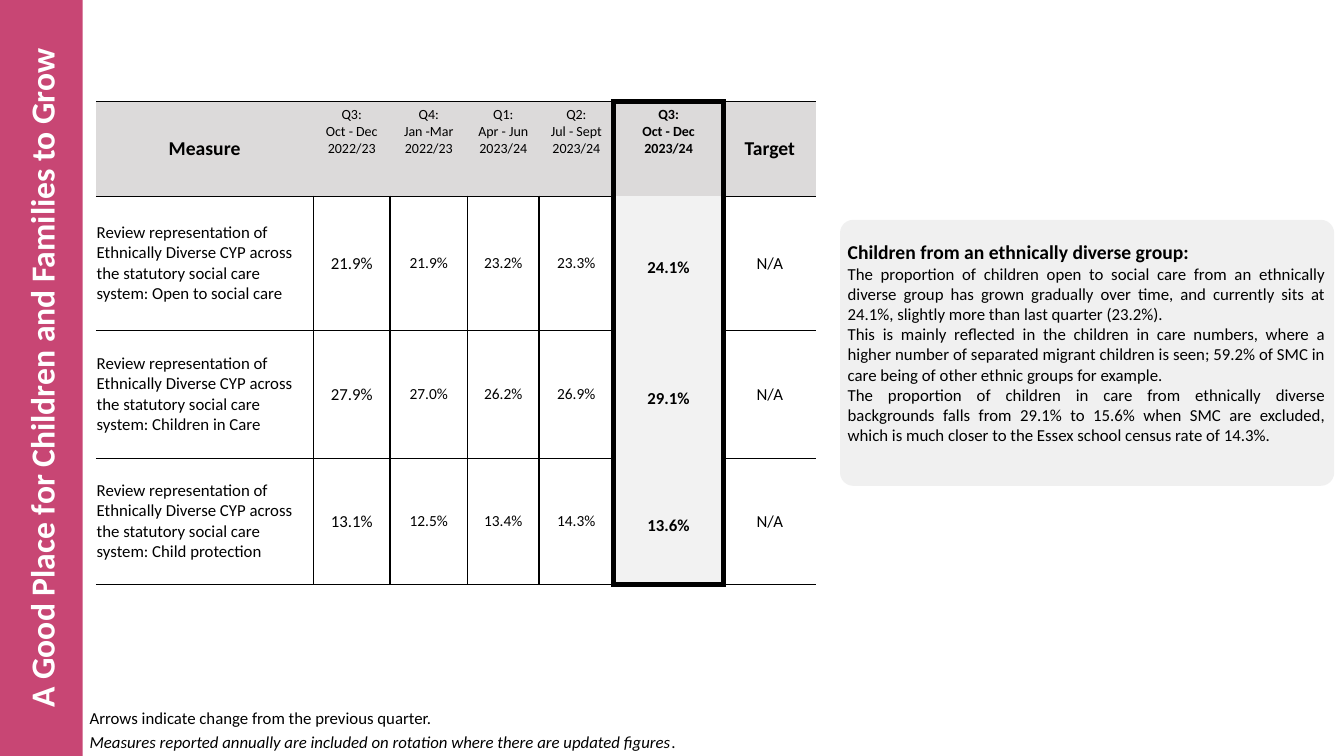
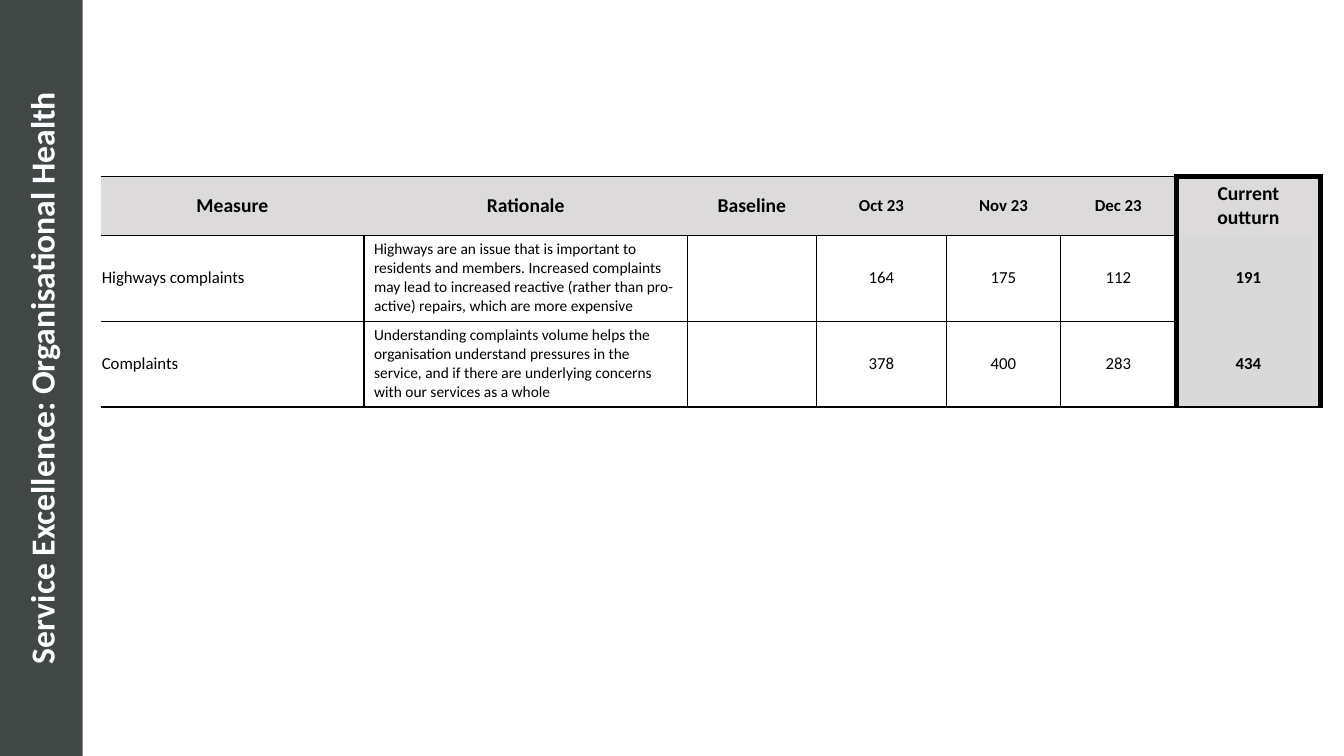
from dataclasses import dataclass

from lxml import etree
from pptx import Presentation, util as u
from pptx.dml.color import RGBColor
from pptx.enum import shapes, text
from pptx.oxml import ns

FONT = "Calibri"
BLACK = RGBColor(0x00, 0x00, 0x00)
WHITE = RGBColor(0xFF, 0xFF, 0xFF)
PINK = RGBColor(0xC8, 0x46, 0x74)
SLATE = RGBColor(0x41, 0x47, 0x45)
HEADER_GREY = RGBColor(0xDC, 0xDA, 0xDA)
LIGHT_GREY = RGBColor(0xF2, 0xF2, 0xF2)
MID_GREY = RGBColor(0xD9, 0xD9, 0xD9)

SLIDE_WIDTH, SLIDE_HEIGHT = 960, 540
BAND_WIDTH = 59
THIN, THICK = 1, 4.5
CENTER, LEFT = text.PP_ALIGN.CENTER, text.PP_ALIGN.LEFT
JUSTIFY = text.PP_ALIGN.JUSTIFY
TOP, MIDDLE = text.MSO_ANCHOR.TOP, text.MSO_ANCHOR.MIDDLE


@dataclass(frozen=True)
class Box:
    left: float
    top: float
    width: float
    height: float

    def lengths(self) -> list[u.Length]:
        return [u.Pt(value) for value in (self.left, self.top, self.width, self.height)]


@dataclass(frozen=True)
class Column:
    width: float
    heading: str
    heading_size: float = 14
    heading_bold: bool = True
    size: float = 12
    align: text.PP_ALIGN = CENTER
    padding: float = 0.7


@dataclass(frozen=True)
class MeasureTable:
    left: float
    top: float
    columns: list[Column]
    row_heights: list[float]
    rows: list[list[str]]
    highlight: int
    highlight_fill: RGBColor
    highlight_bottom: float
    highlight_drop: float = 0

    def vertical_weight(self, row: int, edge: int) -> float:
        """Line weight at the left of column number `edge`."""
        if edge in (self.highlight, self.highlight + 1):
            return THICK
        inner = row > 0 and 0 < edge < len(self.columns)
        return THIN if inner else 0

    def horizontal_weight(self, edge: int, column: int) -> float:
        """Line weight above row number `edge`."""
        if column != self.highlight:
            return THIN
        return {0: THICK, len(self.row_heights): self.highlight_bottom}.get(edge, 0)


@dataclass(frozen=True)
class Passage:
    words: str
    size: float = 12
    bold: bool = False
    italic: bool = False
    align: text.PP_ALIGN = LEFT


QUARTERS = [
    Column(54.7, "Q3:\nOct - Dec\n2022/23", 10, False),
    Column(55.4, "Q4:\nJan -Mar\n2022/23", 10, False, 11),
    Column(51.1, "Q1:\nApr - Jun\n2023/24", 10, False, 11),
    Column(53.3, "Q2:\nJul - Sept\n2023/24", 10, False, 11),
    Column(78.5, "Q3:\nOct - Dec\n2023/24", 10),
]
REVIEW = ("Review representation of Ethnically Diverse CYP across "
          "the statutory social care system: ")
DIVERSITY_TABLE = MeasureTable(
    left=68.4, top=72.5,
    columns=[Column(155.5, "Measure", align=LEFT), *QUARTERS, Column(66.2, "Target")],
    row_heights=[67.7, 95.8, 91.5, 90],
    rows=[
        [REVIEW + "Open to social care", "21.9%", "21.9%", "23.2%", "23.3%", "24.1%", "N/A"],
        [REVIEW + "Children in Care", "27.9%", "27.0%", "26.2%", "26.9%", "29.1%", "N/A"],
        [REVIEW + "Child protection", "13.1%", "12.5%", "13.4%", "14.3%", "13.6%", "N/A"],
    ],
    highlight=5, highlight_fill=LIGHT_GREY, highlight_bottom=THICK, highlight_drop=6,
)
COMPLAINTS_TABLE = MeasureTable(
    left=72, top=126,
    columns=[
        Column(188, "Measure", align=LEFT),
        Column(231, "Rationale", size=11, align=LEFT, padding=7.2),
        Column(92.2, "Baseline"),
        Column(92.9, "Oct 23", 12),
        Column(81.4, "Nov 23", 12),
        Column(82.8, "Dec 23", 12),
        Column(103, "Current outturn"),
    ],
    row_heights=[42, 61.4, 61.4],
    rows=[
        ["Highways complaints",
         "Highways are an issue that is important to residents and members. Increased "
         "complaints may lead to increased reactive (rather than pro-active) repairs, "
         "which are more expensive",
         "", "164", "175", "112", "191"],
        ["Complaints",
         "Understanding complaints volume helps the organisation understand pressures "
         "in the service, and if there are underlying concerns with our services as a whole",
         "", "378", "400", "283", "434"],
    ],
    highlight=6, highlight_fill=MID_GREY, highlight_bottom=THIN,
)
COMMENTARY = [
    Passage("Children from an ethnically diverse group:", 14, bold=True, align=JUSTIFY),
    Passage("The proportion of children open to social care from an ethnically diverse group "
            "has grown gradually over time, and currently sits at 24.1%, slightly more than "
            "last quarter (23.2%).", align=JUSTIFY),
    Passage("This is mainly reflected in the children in care numbers, where a higher number "
            "of separated migrant children is seen; 59.2% of SMC in care being of other "
            "ethnic groups for example.", align=JUSTIFY),
    Passage("The proportion of children in care from ethnically diverse backgrounds falls "
            "from 29.1% to 15.6% when SMC are excluded, which is much closer to the Essex "
            "school census rate of 14.3%.", align=JUSTIFY),
]


def format_paragraph(paragraph, size: float, bold: bool = False,
                     align: text.PP_ALIGN = LEFT, color: RGBColor = BLACK) -> None:
    paragraph.alignment = align
    font = paragraph.font
    font.name, font.size, font.bold = FONT, u.Pt(size), bold
    font.color.rgb = color


def clear_margins(frame) -> None:
    frame.margin_left = frame.margin_right = frame.margin_top = frame.margin_bottom = 0


def add_banded_slide(presentation, title: str, color: RGBColor):
    """Add a slide whose title runs up a coloured band on the left edge."""
    slide = presentation.slides.add_slide(presentation.slide_layouts[5])
    band = slide.shapes.title
    box = Box((BAND_WIDTH - SLIDE_HEIGHT) / 2, (SLIDE_HEIGHT - BAND_WIDTH) / 2,
              SLIDE_HEIGHT, BAND_WIDTH)
    band.left, band.top, band.width, band.height = box.lengths()
    band.rotation = 270
    band.fill.solid()
    band.fill.fore_color.rgb = color
    frame = band.text_frame
    frame.text = title
    frame.auto_size = text.MSO_AUTO_SIZE.NONE
    frame.vertical_anchor = MIDDLE
    clear_margins(frame)
    format_paragraph(frame.paragraphs[0], 24, True, CENTER, WHITE)
    return slide


def add_text(slide, box: Box, passages: list[Passage]):
    frame = slide.shapes.add_textbox(*box.lengths()).text_frame
    frame.word_wrap = True
    clear_margins(frame)
    for index, passage in enumerate(passages):
        paragraph = frame.add_paragraph() if index else frame.paragraphs[0]
        paragraph.text = passage.words
        format_paragraph(paragraph, passage.size, passage.bold, passage.align)
        paragraph.font.italic = passage.italic
    return frame


def add_panel(slide, box: Box) -> None:
    panel = slide.shapes.add_shape(shapes.MSO_SHAPE.ROUNDED_RECTANGLE, *box.lengths())
    panel.adjustments[0] = 0.05
    panel.shadow.inherit = False
    panel.line.fill.background()
    panel.fill.solid()
    panel.fill.fore_color.rgb = MID_GREY
    color = panel.fill._xPr.find(".//" + ns.qn("a:srgbClr"))
    etree.SubElement(color, ns.qn("a:alpha"), val="38000")


def set_border(cell, side: str, weight: float) -> None:
    """Draw one side (L, R, T or B) of a cell; weight 0 means no line."""
    properties = cell._tc.get_or_add_tcPr()
    line = etree.SubElement(properties, ns.qn(f"a:ln{side}"), w=str(u.Pt(weight)))
    if weight:
        fill = etree.SubElement(line, ns.qn("a:solidFill"))
        etree.SubElement(fill, ns.qn("a:srgbClr"), val=str(BLACK))
    else:
        etree.SubElement(line, ns.qn("a:noFill"))


def fill_cell(cell, spec: MeasureTable, row: int, index: int, words: str) -> None:
    column = spec.columns[index]
    highlighted = index == spec.highlight
    cell.text = words
    if row == 0:
        size, bold, align = column.heading_size, column.heading_bold, CENTER
        color = HEADER_GREY
        cell.vertical_anchor = TOP if "\n" in words else MIDDLE
    else:
        size, bold, align = column.size, highlighted, column.align
        color = spec.highlight_fill if highlighted else WHITE
        cell.vertical_anchor = MIDDLE
        cell.margin_left = cell.margin_right = u.Pt(column.padding)
        cell.margin_top = u.Pt(spec.highlight_drop if highlighted else 0)
        cell.margin_bottom = 0
    for paragraph in cell.text_frame.paragraphs:
        format_paragraph(paragraph, size, bold, align)
    set_border(cell, "L", spec.vertical_weight(row, index))
    set_border(cell, "R", spec.vertical_weight(row, index + 1))
    set_border(cell, "T", spec.horizontal_weight(row, index))
    set_border(cell, "B", spec.horizontal_weight(row + 1, index))
    cell.fill.solid()
    cell.fill.fore_color.rgb = color


def add_measure_table(slide, spec: MeasureTable) -> None:
    box = Box(spec.left, spec.top, sum(column.width for column in spec.columns),
              sum(spec.row_heights))
    table = slide.shapes.add_table(len(spec.row_heights), len(spec.columns),
                                   *box.lengths()).table
    table.first_row = table.horz_banding = False
    for index, column in enumerate(spec.columns):
        table.columns[index].width = u.Pt(column.width)
    lines = [[column.heading for column in spec.columns], *spec.rows]
    for row, (height, line) in enumerate(zip(spec.row_heights, lines)):
        table.rows[row].height = u.Pt(height)
        for index, words in enumerate(line):
            fill_cell(table.cell(row, index), spec, row, index, words)


def main() -> None:
    presentation = Presentation()
    presentation.slide_width = u.Pt(SLIDE_WIDTH)
    presentation.slide_height = u.Pt(SLIDE_HEIGHT)

    slide = add_banded_slide(
        presentation, "A Good Place for Children and Families to Grow", PINK)
    add_panel(slide, Box(600, 157, 353, 190))
    add_text(slide, Box(605.5, 171.4, 341.3, 144), COMMENTARY)
    add_measure_table(slide, DIVERSITY_TABLE)
    add_text(slide, Box(64, 505.5, 431, 24),
             [Passage("Arrows indicate change from the previous quarter.")])
    note = add_text(slide, Box(64, 522.7, 438, 24), [Passage(
        "Measures reported annually are included on rotation where there are updated figures",
        italic=True)])
    full_stop = note.paragraphs[0].add_run()
    full_stop.text = "."
    full_stop.font.italic = False

    slide = add_banded_slide(
        presentation, "Service Excellence: Organisational Health", SLATE)
    add_measure_table(slide, COMPLAINTS_TABLE)
    presentation.save("out.pptx")


if __name__ == "__main__":
    main()
